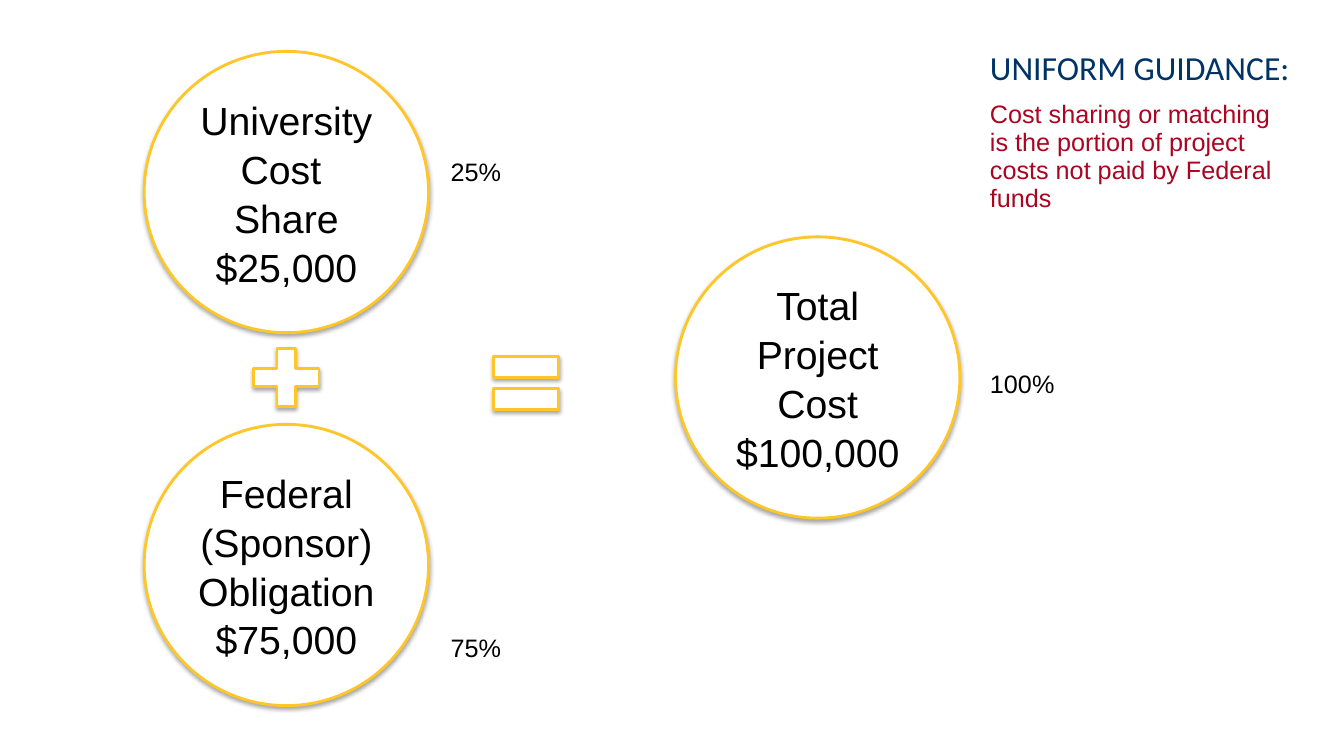
from lxml import etree
from pptx import Presentation
from pptx.dml.color import RGBColor
from pptx.enum.shapes import MSO_SHAPE
from pptx.enum.text import MSO_ANCHOR, PP_ALIGN
from pptx.oxml.ns import qn
from pptx.util import Inches, Pt

OVAL, PLUS, EQUAL = MSO_SHAPE.OVAL, MSO_SHAPE.MATH_PLUS, MSO_SHAPE.MATH_EQUAL
MIDDLE, CENTER, LEFT = MSO_ANCHOR.MIDDLE, PP_ALIGN.CENTER, PP_ALIGN.LEFT

COLORS = {"white": "FFFFFF", "gold": "FFC627", "black": "000000",
          "navy": "003366", "red": "AB0521"}

CIRCLE_W, CIRCLE_H = 2.82, 2.79
CIRCLES = [
    (1.43, 0.51, ["University Cost ", "Share", "$25,000"]),
    (1.43, 4.21, ["Federal (Sponsor) Obligation", "$75,000"]),
    (6.7, 2.35, ["Total Project Cost", "$100,000"]),
]
OPERATORS = [(PLUS, 2.4, 3.35, 0.88, 0.79), (EQUAL, 4.78, 3.35, 0.88, 0.9)]
PERCENTAGES = [
    (4.37, 1.5, 1.01, "25%"),
    (4.37, 6.22, 1.01, "75%"),
    (9.72, 3.6, 1.22, "100%"),
]
GUIDANCE = [
    ("UNIFORM GUIDANCE:", 24, "Calibri", "navy"),
    ("Cost sharing or matching is the portion of project costs "
     "not paid by Federal funds", 18, "Arial", "red"),
]


def rgb(name):
    return RGBColor.from_string(COLORS[name])


def add_shadow(sp):
    effects = etree.SubElement(sp._element.spPr, qn("a:effectLst"))
    shadow = etree.SubElement(effects, qn("a:outerShdw"), blurRad=str(Pt(3)),
                              dist=str(Pt(1.8)), dir="5400000", rotWithShape="0")
    color = etree.SubElement(shadow, qn("a:srgbClr"), val=COLORS["black"])
    etree.SubElement(color, qn("a:alpha"), val="35000")


def add_outlined(s, kind, x, y, w, h):
    sp = s.shapes.add_shape(kind, Inches(x), Inches(y), Inches(w), Inches(h))
    sp.fill.solid()
    sp.fill.fore_color.rgb = rgb("white")
    sp.line.color.rgb = rgb("gold")
    sp.line.width = Pt(2)
    add_shadow(sp)
    return sp


def write(tf, lines, align=LEFT, spacing=None, after=None):
    tf.word_wrap = True
    for i, (text, size, font, color) in enumerate(lines):
        p = tf.paragraphs[0] if i == 0 else tf.add_paragraph()
        p.alignment = align
        p.line_spacing = spacing
        p.space_after = after
        r = p.add_run()
        r.text = text
        r.font.size = Pt(size)
        r.font.name = font
        r.font.color.rgb = rgb(color)


def add_text(s, x, y, w, h, lines, **layout):
    box = s.shapes.add_textbox(Inches(x), Inches(y), Inches(w), Inches(h))
    write(box.text_frame, lines, **layout)


def main():
    prs = Presentation()
    prs.slide_width, prs.slide_height = Inches(13.33), Inches(7.5)
    s = prs.slides.add_slide(prs.slide_layouts[6])

    for x, y, lines in CIRCLES:
        tf = add_outlined(s, OVAL, x, y, CIRCLE_W, CIRCLE_H).text_frame
        tf.vertical_anchor = MIDDLE
        tf.margin_left = tf.margin_right = Inches(0.05)
        tf.margin_top = tf.margin_bottom = Inches(0.05)
        write(tf, [(line, 28, "Arial", "black") for line in lines],
              align=CENTER, spacing=1.04)

    for operator in OPERATORS:
        add_outlined(s, *operator)

    for x, y, w, text in PERCENTAGES:
        add_text(s, x, y, w, 0.4, [(text, 18, "Arial", "black")])

    add_text(s, 9.72, 0.54, 3.22, 1.35, GUIDANCE, spacing=Pt(20), after=Pt(9))
    prs.save("out.pptx")


if __name__ == "__main__":
    main()
